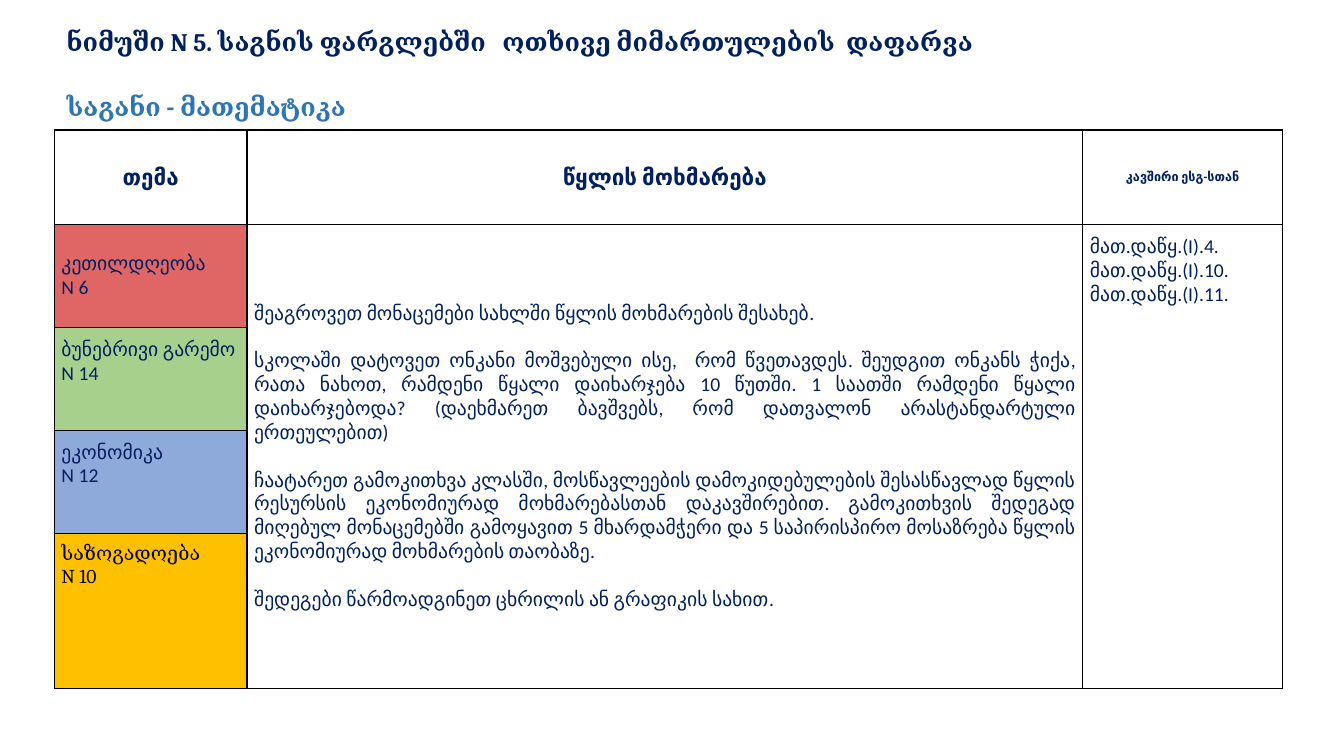
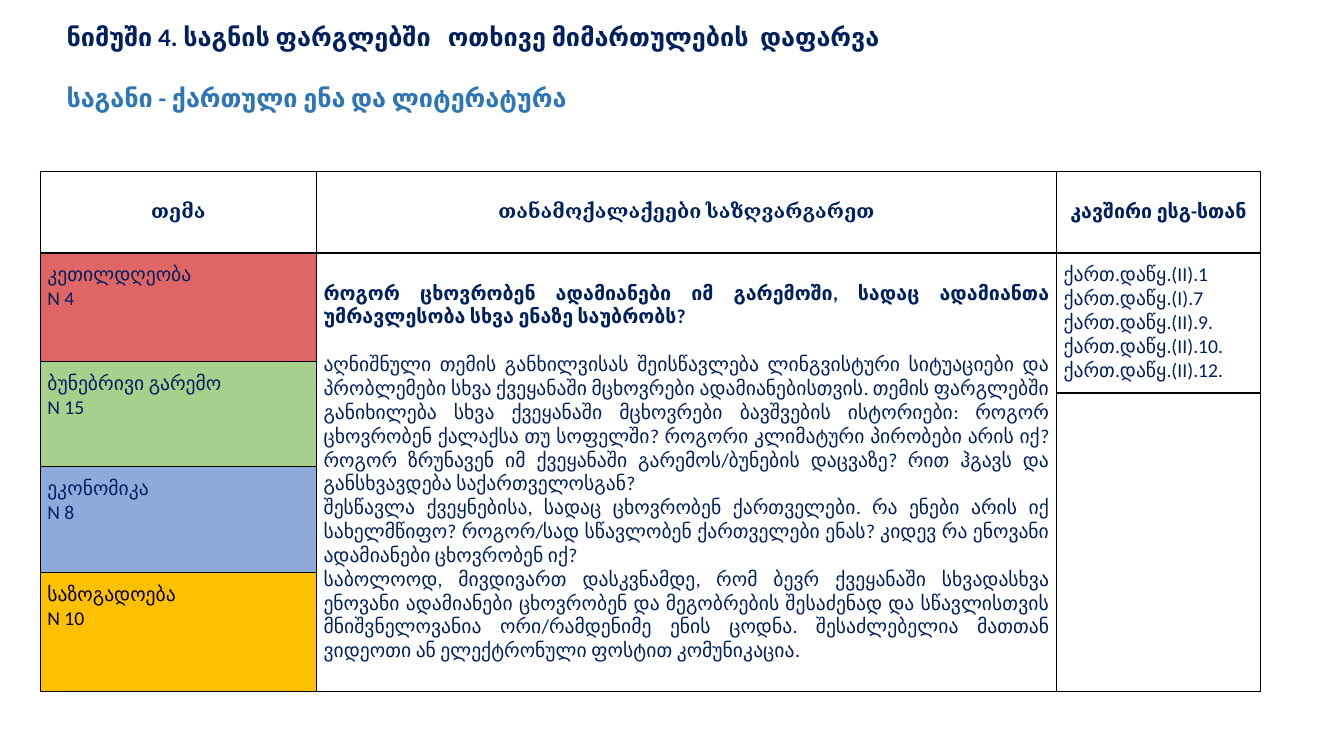
from dataclasses import dataclass
from typing import Any

from lxml.etree import SubElement
from pptx import Presentation
from pptx.dml.color import RGBColor
from pptx.enum.text import MSO_AUTO_SIZE as AutoSize
from pptx.enum.text import MSO_VERTICAL_ANCHOR as Anchor
from pptx.enum.text import PP_PARAGRAPH_ALIGNMENT as Align
from pptx.oxml.ns import qn
from pptx.util import Inches, Pt

# Shared colours and fonts
NAVY = RGBColor(0x00, 0x20, 0x60)
BLUE = RGBColor(0x2E, 0x75, 0xB5)
BLACK = RGBColor(0x00, 0x00, 0x00)
WHITE = RGBColor(0xFF, 0xFF, 0xFF)
RED = RGBColor(0xE0, 0x66, 0x66)
GREEN = RGBColor(0xA8, 0xD0, 0x8D)
PERIWINKLE = RGBColor(0x8E, 0xAA, 0xDB)
AMBER = RGBColor(0xFF, 0xC0, 0x00)
SANS = "Calibri"
SERIF = "Cambria"

# Shared formats
TITLE_FRAME = {
    "word_wrap": True, "auto_size": AutoSize.NONE, "vertical_anchor": Anchor.TOP,
    "margin_left": Inches(0.1), "margin_right": Inches(0.1),
    "margin_top": Inches(0.05), "margin_bottom": Inches(0.05),
}
CELL_MARGINS = {
    "margin_left": Inches(0.07), "margin_right": Inches(0.07),
    "margin_top": Inches(0.1), "margin_bottom": Inches(0.1),
}
BORDER_SIDES = ("a:lnL", "a:lnR", "a:lnT", "a:lnB")
BLANK_LINE = 17
THEMES = (
    ("კეთილდღეობა", RED),
    ("ბუნებრივი გარემო", GREEN),
    ("ეკონომიკა", PERIWINKLE),
    ("საზოგადოება", AMBER),
)


@dataclass(frozen=True)
class Line:
    text: str
    size: float = 14
    font: str = SANS
    color: RGBColor = NAVY
    bold: bool = False
    gap: float = 0


@dataclass(frozen=True)
class Block:
    """A cell, or several merged rows of one column."""
    row: int
    column: int
    lines: tuple[Line, ...]
    rows: int = 1
    fill: RGBColor = WHITE
    align: Any = Align.LEFT
    anchor: Any = Anchor.TOP


@dataclass(frozen=True)
class Heading:
    text: str
    subject: str
    font: str
    top: float
    gap: float


@dataclass(frozen=True)
class Grid:
    left: float
    top: float
    columns: tuple[float, ...]
    rows: tuple[float, ...]
    blocks: tuple[Block, ...]


def apply_format(target: Any, values: dict[str, Any]) -> None:
    for name, value in values.items():
        setattr(target, name, value)


def add_run(paragraph: Any, line: Line) -> None:
    run = paragraph.add_run()
    run.text = line.text
    apply_format(run.font, {"size": Pt(line.size), "name": line.font, "bold": line.bold})
    run.font.color.rgb = line.color


def write_lines(frame: Any, paragraphs: tuple[tuple[Line, ...], ...], align: Any) -> None:
    for index, lines in enumerate(paragraphs):
        paragraph = frame.add_paragraph() if index else frame.paragraphs[0]
        apply_format(paragraph, {"alignment": align, "space_before": Pt(lines[0].gap)})
        for line in lines:
            add_run(paragraph, line)


def draw_heading(slide: Any, heading: Heading) -> None:
    title = slide.shapes.title
    apply_format(title, {
        "left": Inches(0.56), "top": Inches(heading.top),
        "width": Inches(11.47), "height": Inches(1.02),
    })
    apply_format(title.text_frame, TITLE_FRAME)
    subtitle = (
        Line("საგანი", 18, heading.font, BLUE, True, heading.gap),
        Line(" - ", 18, SANS, BLUE, True),
        Line(heading.subject, 18, heading.font, BLUE, True),
    )
    first = (Line(heading.text, 18, heading.font, NAVY, True),)
    write_lines(title.text_frame, (first, subtitle), Align.LEFT)


def add_borders(cell: Any) -> None:
    properties = cell._tc.get_or_add_tcPr()
    for side in BORDER_SIDES:
        border = SubElement(properties, qn(side), w=str(Pt(1)))
        fill = SubElement(border, qn("a:solidFill"))
        SubElement(fill, qn("a:srgbClr"), val=str(BLACK))


def draw_table(slide: Any, grid: Grid) -> None:
    frame = slide.shapes.add_table(
        len(grid.rows), len(grid.columns), Inches(grid.left), Inches(grid.top),
        Inches(sum(grid.columns)), Inches(sum(grid.rows)))
    table = frame.table
    apply_format(table, {"first_row": False, "horz_banding": False})
    for column, width in zip(table.columns, grid.columns):
        column.width = Inches(width)
    for row, height in zip(table.rows, grid.rows):
        row.height = Inches(height)
    for cell in table.iter_cells():
        add_borders(cell)
        apply_format(cell, CELL_MARGINS)

    for block in grid.blocks:
        cell = table.cell(block.row, block.column)
        if block.rows > 1:
            cell.merge(table.cell(block.row + block.rows - 1, block.column))
        cell.vertical_anchor = block.anchor
        cell.fill.solid()
        cell.fill.fore_color.rgb = block.fill
        write_lines(cell.text_frame, tuple((line,) for line in block.lines), block.align)


def header_row(*lines: Line) -> tuple[Block, ...]:
    return tuple(Block(0, column, (line,), align=Align.CENTER, anchor=Anchor.MIDDLE)
                 for column, line in enumerate(lines))


def theme_column(numbers: tuple[int, ...], spans: tuple[int, ...],
                 first_anchor: Any, last_font: str) -> tuple[Block, ...]:
    blocks = []
    row = 1
    for (name, fill), number, span in zip(THEMES, numbers, spans):
        is_last = fill == AMBER
        font, color = (last_font, BLACK) if is_last else (SANS, NAVY)
        lines = tuple(Line(text, font=font, color=color) for text in (name, f"N {number}"))
        anchor = first_anchor if row == 1 else Anchor.TOP
        blocks.append(Block(row, 0, lines, span, fill, anchor=anchor))
        row += span
    return tuple(blocks)


def standards(subject: str, *codes: str) -> tuple[Line, ...]:
    return tuple(Line(f"{subject}.დაწყ.{code}") for code in codes)


# Mathematics
MATH_HEADING = Heading("ნიმუში N 5. საგნის ფარგლებში   ოთხივე მიმართულების  დაფარვა",
                       "მათემატიკა", SERIF, 0.21, 25)
MATH_TASKS = (
    Line("შეაგროვეთ მონაცემები სახლში წყლის მოხმარების შესახებ."),
    Line("სკოლაში დატოვეთ ონკანი მოშვებული ისე,  რომ წვეთავდეს. შეუდგით ონკანს ჭიქა, "
         "რათა ნახოთ, რამდენი წყალი დაიხარჯება 10 წუთში. 1 საათში რამდენი წყალი "
         "დაიხარჯებოდა? (დაეხმარეთ ბავშვებს, რომ დათვალონ არასტანდარტული ერთეულებით)",
         gap=BLANK_LINE),
    Line("ჩაატარეთ გამოკითხვა კლასში, მოსწავლეების დამოკიდებულების შესასწავლად წყლის "
         "რესურსის ეკონომიურად მოხმარებასთან დაკავშირებით. გამოკითხვის შედეგად მიღებულ "
         "მონაცემებში გამოყავით 5 მხარდამჭერი და 5 საპირისპირო მოსაზრება წყლის "
         "ეკონომიურად მოხმარების თაობაზე.", gap=BLANK_LINE),
    Line("შედეგები წარმოადგინეთ ცხრილის ან გრაფიკის სახით.", gap=BLANK_LINE),
)
MATH_GRID = Grid(
    0.54, 1.29, (1.91, 8.29, 1.98), (0.94, 1.02, 1.02, 1.02, 1.54),
    header_row(Line("თემა", 16, bold=True), Line("წყლის მოხმარება", 16, bold=True),
               Line("კავშირი ესგ-სთან", 9, bold=True))
    + theme_column((6, 14, 12, 10), (1, 1, 1, 1), Anchor.MIDDLE, SERIF)
    + (
        Block(1, 1, MATH_TASKS, 4, align=Align.JUSTIFY, anchor=Anchor.MIDDLE),
        Block(1, 2, standards("მათ", "(I).4.", "(I).10.", "(I).11."), 4),
    ))

# Georgian language and literature
LANGUAGE_HEADING = Heading("ნიმუში 4. საგნის ფარგლებში   ოთხივე მიმართულების  დაფარვა",
                           "ქართული ენა და ლიტერატურა", SANS, 0.16, 22)
LANGUAGE_TASKS = (
    Line("როგორ ცხოვრობენ ადამიანები იმ გარემოში, სადაც ადამიანთა უმრავლესობა სხვა "
         "ენაზე საუბრობს?", bold=True),
    Line("აღნიშნული თემის განხილვისას შეისწავლება ლინგვისტური სიტუაციები და პრობლემები "
         "სხვა ქვეყანაში მცხოვრები ადამიანებისთვის. თემის ფარგლებში განიხილება სხვა "
         "ქვეყანაში მცხოვრები ბავშვების ისტორიები: როგორ ცხოვრობენ ქალაქსა თუ სოფელში? "
         "როგორი კლიმატური პირობები არის იქ? როგორ ზრუნავენ იმ ქვეყანაში "
         "გარემოს/ბუნების დაცვაზე? რით ჰგავს და განსხვავდება საქართველოსგან?",
         gap=BLANK_LINE),
    Line("შესწავლა ქვეყნებისა, სადაც ცხოვრობენ ქართველები. რა ენები არის იქ სახელმწიფო? "
         "როგორ/სად სწავლობენ ქართველები ენას? კიდევ რა ენოვანი ადამიანები ცხოვრობენ იქ?"),
    Line("საბოლოოდ, მივდივართ დასკვნამდე, რომ ბევრ ქვეყანაში სხვადასხვა ენოვანი "
         "ადამიანები ცხოვრობენ და მეგობრების შესაძენად და სწავლისთვის მნიშვნელოვანია "
         "ორი/რამდენიმე ენის ცოდნა. შესაძლებელია მათთან ვიდეოთი ან ელექტრონული ფოსტით "
         "კომუნიკაცია."),
)
LANGUAGE_GRID = Grid(
    0.4, 1.7, (2.74, 7.34, 2.02), (0.81, 1.08, 0.31, 0.73, 1.05, 1.18),
    header_row(Line("თემა", font=SERIF, bold=True),
               Line("თანამოქალაქეები საზღვარგარეთ", font=SERIF, bold=True),
               Line("კავშირი ესგ-სთან", bold=True))
    + theme_column((4, 15, 8, 10), (1, 2, 1, 1), Anchor.TOP, SANS)
    + (
        Block(1, 1, LANGUAGE_TASKS, 5, align=Align.JUSTIFY, anchor=Anchor.MIDDLE),
        Block(1, 2, standards("ქართ", "(II).1", "(I).7", "(II).9.", "(II).10.", "(II).12."), 2),
        Block(3, 2, (), 3),
    ))


def main() -> None:
    presentation = Presentation()
    apply_format(presentation, {"slide_width": Inches(13.33), "slide_height": Inches(7.5)})
    title_only = presentation.slide_layouts[5]
    for heading, grid in ((MATH_HEADING, MATH_GRID), (LANGUAGE_HEADING, LANGUAGE_GRID)):
        slide = presentation.slides.add_slide(title_only)
        draw_heading(slide, heading)
        draw_table(slide, grid)
    presentation.save("out.pptx")


if __name__ == "__main__":
    main()
